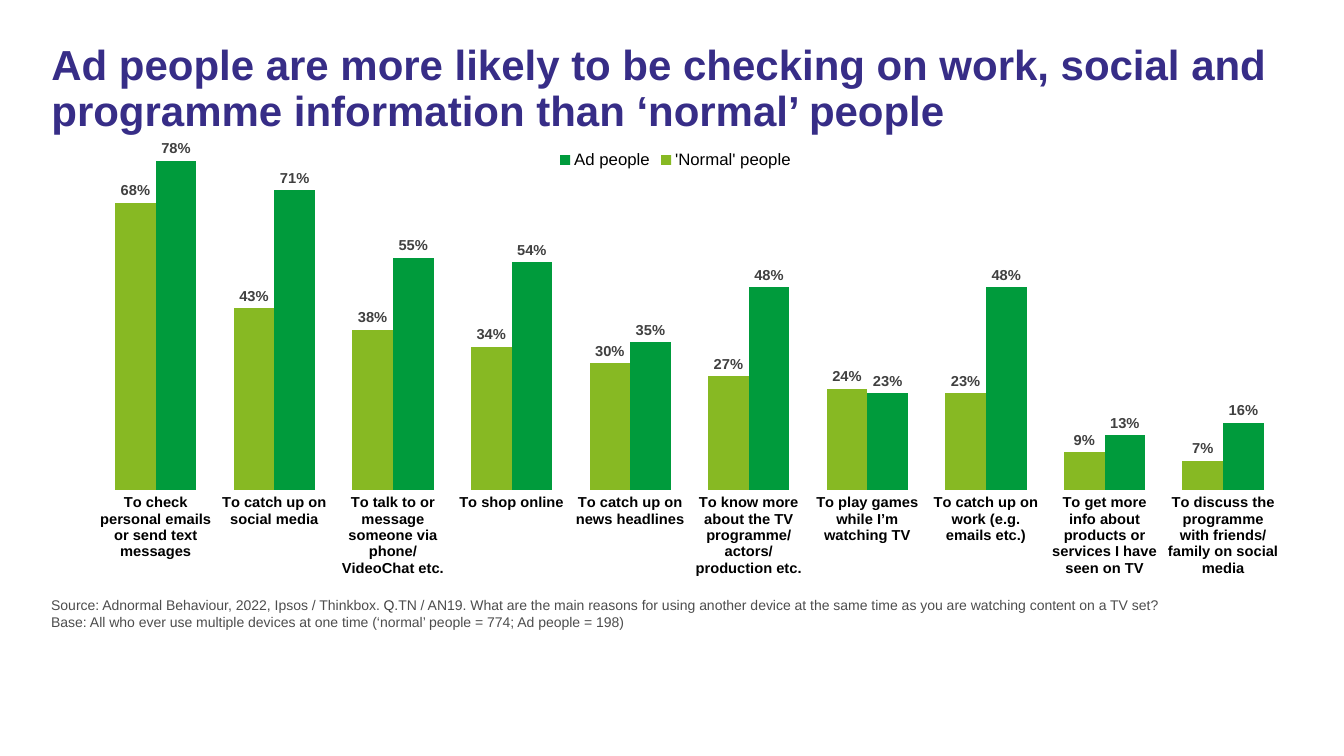
from lxml import etree
from pptx import Presentation
from pptx.chart.data import CategoryChartData
from pptx.dml.color import RGBColor
from pptx.enum.chart import XL_CHART_TYPE, XL_LABEL_POSITION, XL_LEGEND_POSITION, XL_TICK_MARK
from pptx.enum.text import MSO_ANCHOR, MSO_AUTO_SIZE, PP_ALIGN
from pptx.oxml.ns import qn
from pptx.util import Inches, Pt

CLUSTERED = XL_CHART_TYPE.COLUMN_CLUSTERED
OUTSIDE_END = XL_LABEL_POSITION.OUTSIDE_END
LEGEND_TOP = XL_LEGEND_POSITION.TOP
TICK_NONE = XL_TICK_MARK.NONE
ANCHOR_TOP = MSO_ANCHOR.TOP
NO_AUTO_SIZE = MSO_AUTO_SIZE.NONE
LEFT = PP_ALIGN.LEFT

PURPLE = RGBColor(0x37, 0x2D, 0x87)
GREEN = RGBColor(0x00, 0x9B, 0x3C)
LIME = RGBColor(0x87, 0xB9, 0x23)
DARK_GREY = RGBColor(0x40, 0x40, 0x40)
GREY = RGBColor(0x4D, 0x4D, 0x4D)
BLACK = RGBColor(0, 0, 0)
FONT_NAME = "Arial"

TITLE = ("Ad people are more likely to be checking on work, social and "
         "programme information than ‘normal’ people")
SOURCE = [
    [("Source: Adnormal Behaviour, 2022, Ipsos / Thinkbox. ", GREY),
     ("Q.", DARK_GREY),
     ("TN / AN19. What are the main reasons for using another device at the "
      "same time as you are watching content on a TV set?", GREY)],
    [("Base: All who ever use multiple devices at one time "
      "(‘normal’ people = 774; Ad people = 198)", GREY)],
]
REASONS = [
    ("To discuss the programme with friends/family on social media", 0.16, 0.07),
    ("To get more info about products or services I have seen on TV", 0.13, 0.09),
    ("To catch up on work (e.g. emails etc.)", 0.48, 0.23),
    ("To play games while I’m watching TV", 0.23, 0.24),
    ("To know more about the TV programme/ actors/ production etc.", 0.48, 0.27),
    ("To catch up on news headlines", 0.35, 0.3),
    ("To shop online", 0.54, 0.34),
    ("To talk to or message someone via phone/ VideoChat etc.", 0.55, 0.38),
    ("To catch up on social media", 0.71, 0.43),
    ("To check personal emails or send text messages", 0.78, 0.68),
]
PLOT_LAYOUT = {"x": 0.023, "y": 0.028, "w": 0.977, "h": 0.79}


def format_font(font, size, color=BLACK, bold=False):
    font.name = FONT_NAME
    font.size = Pt(size)
    font.bold = bold
    font.color.rgb = color


def write_text(shape, paragraphs, size, bold=False, line_spacing=1.0):
    frame = shape.text_frame
    frame.word_wrap = True
    frame.auto_size = NO_AUTO_SIZE
    frame.vertical_anchor = ANCHOR_TOP
    for index, pieces in enumerate(paragraphs):
        paragraph = frame.add_paragraph() if index else frame.paragraphs[0]
        paragraph.alignment = LEFT
        paragraph.line_spacing = line_spacing
        for text, color in pieces:
            run = paragraph.add_run()
            run.text = text
            format_font(run.font, size, color, bold)


def place_title(slide, left, top, width, height):
    title = slide.shapes.title
    title.left, title.top, title.width, title.height = left, top, width, height
    write_text(title, [[(TITLE, PURPLE)]], 30, bold=True, line_spacing=0.9)


def set_plot_layout(chart):
    plot_area = chart.plots[0]._element.getparent()
    for layout in plot_area.findall(qn("c:layout")):
        plot_area.remove(layout)
    layout = etree.Element(qn("c:layout"))
    manual = etree.SubElement(layout, qn("c:manualLayout"))
    settings = [("layoutTarget", "inner"), ("xMode", "edge"), ("yMode", "edge")]
    for name, value in settings + list(PLOT_LAYOUT.items()):
        etree.SubElement(manual, qn(f"c:{name}")).set("val", str(value))
    plot_area.insert(0, layout)


def add_reasons_chart(slide, left, top, width, height):
    names, ad_people, normal_people = zip(*REASONS)
    data = CategoryChartData(number_format="0%")
    data.categories = names
    data.add_series("Ad people", ad_people)
    data.add_series("'Normal' people", normal_people)
    chart = slide.shapes.add_chart(CLUSTERED, left, top, width, height, data).chart
    format_font(chart.font, 18)
    chart.has_title = False
    chart.has_legend = True
    chart.legend.position = LEGEND_TOP
    chart.legend.include_in_layout = False
    format_font(chart.legend.font, 12)

    category_axis = chart.category_axis
    category_axis.reverse_order = True
    category_axis.major_tick_mark = TICK_NONE
    category_axis.format.line.fill.background()
    format_font(category_axis.tick_labels.font, 10.5, bold=True)
    value_axis = chart.value_axis
    value_axis.minimum_scale = 0
    value_axis.maximum_scale = 0.8
    value_axis.has_major_gridlines = False
    value_axis.visible = False

    plot = chart.plots[0]
    plot.gap_width = 92
    plot.overlap = 0
    plot.vary_by_categories = False
    for series, color in zip(plot.series, (GREEN, LIME)):
        series.format.fill.solid()
        series.format.fill.fore_color.rgb = color
        series.invert_if_negative = False
        labels = series.data_labels
        labels.show_value = True
        labels.position = OUTSIDE_END
        labels.number_format = "0%"
        labels.number_format_is_linked = False
        format_font(labels.font, 10.5, DARK_GREY, bold=True)
    set_plot_layout(chart)


def add_source(slide, left, top, width, height):
    write_text(slide.shapes.add_textbox(left, top, width, height), SOURCE, 10)


def main():
    presentation = Presentation()
    presentation.slide_width = Inches(13.33)
    presentation.slide_height = Inches(7.5)
    slide = presentation.slides.add_slide(presentation.slide_layouts[5])
    margin, text_width = Inches(0.41), Inches(12.4)
    place_title(slide, margin, Inches(0.39), text_width, Inches(1.12))
    add_reasons_chart(slide, Inches(0.68), Inches(1.39), Inches(12.04), Inches(4.33))
    add_source(slide, margin, Inches(5.87), text_width, Inches(0.33))
    presentation.save("out.pptx")


if __name__ == "__main__":
    main()
